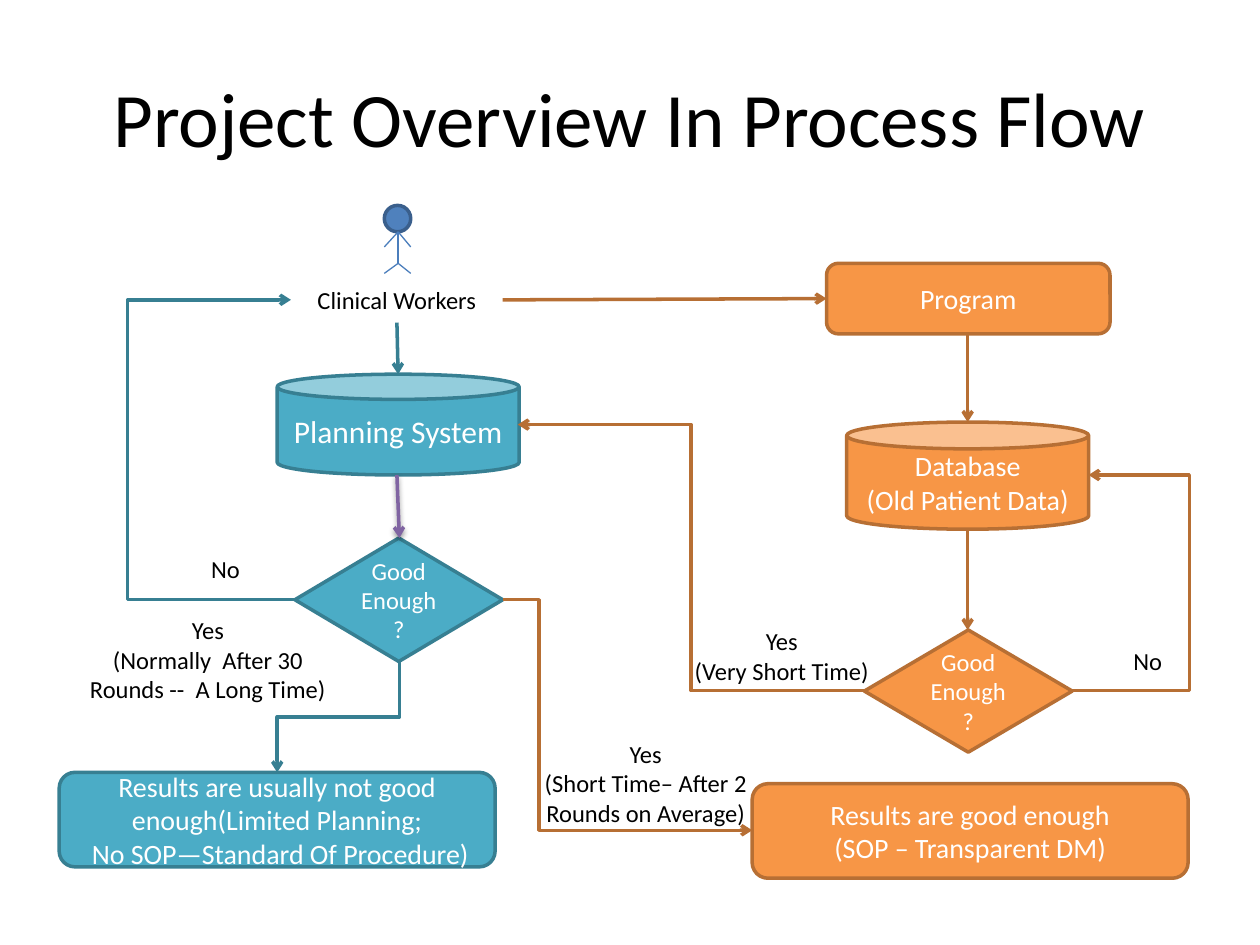
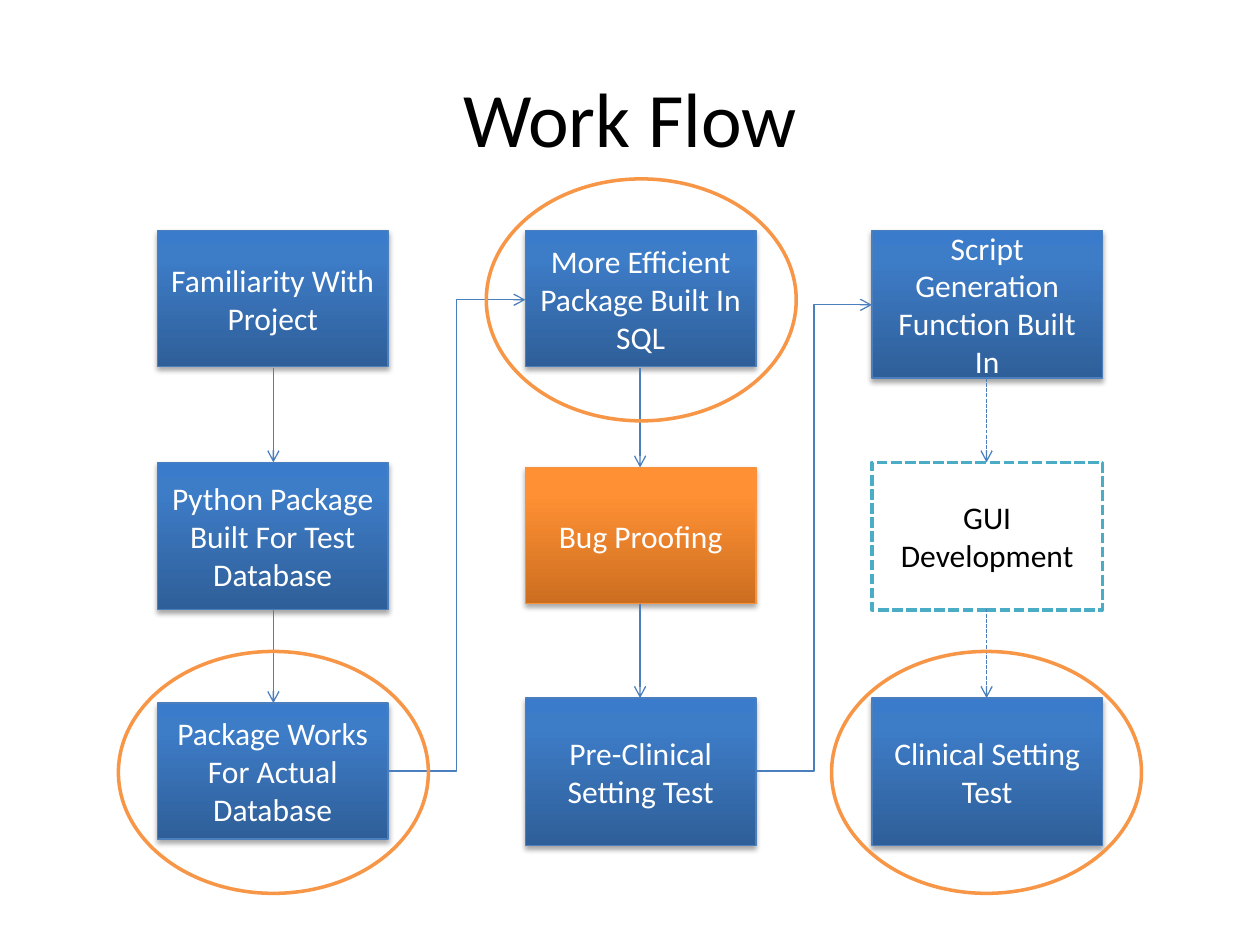
from copy import deepcopy

from lxml import etree
from pptx import Presentation
from pptx import util as u
from pptx.dml.color import RGBColor
from pptx.enum import dml, shapes, text
from pptx.oxml.ns import qn

FONT = "Calibri"
COLORS = {
    "black": "000000", "white": "FFFFFF",
    "blue": "4F81BD", "blue edge": "3A5F8C", "blue line": "4B7EBC",
    "teal": "4BACC6", "teal line": "377F92",
    "orange": "F79646", "orange line": "B76F34", "orange edge": "F69240",
    "purple": "8064A2",
}
# Gradients run from the bottom of a box to its top
GRADIENTS = {
    "blue": ("2F5F99", "3D7CC7", "3A7CCB"),
    "orange": ("CC6E20", "FF9034", "FF9136"),
}
STOPS = (0, 0.8, 1)
KINDS = shapes.MSO_SHAPE
DASH = dml.MSO_LINE.SQUARE_DOT


class Deck:
    def __init__(self):
        self.presentation = Presentation()
        self.presentation.slide_width = u.Inches(10)
        self.presentation.slide_height = u.Inches(7.5)
        self.slide = None

    def color(self, name):
        return RGBColor.from_string(COLORS[name])

    def add_slide(self, title):
        layout = self.presentation.slide_layouts[5]
        self.slide = self.presentation.slides.add_slide(layout)
        shape = self.slide.shapes.title
        shape.left, shape.top, shape.width, shape.height = map(u.Inches, (0.5, 0.3, 9, 1.25))
        self.set_text(shape, title, 44, "black")

    def set_text(self, shape, words, size, color):
        frame = shape.text_frame
        frame.text = words
        frame.word_wrap = True
        frame.vertical_anchor = text.MSO_ANCHOR.MIDDLE
        for paragraph in frame.paragraphs:
            paragraph.alignment = text.PP_ALIGN.CENTER
            paragraph.font.name = FONT
            paragraph.font.size = u.Pt(size)
            paragraph.font.color.rgb = self.color(color)

    def stroke(self, line, color, width, dash=None):
        line.color.rgb = self.color(color)
        line.width = u.Pt(width)
        if dash:
            line.dash_style = dash

    def cast_shadow(self, effects, alpha, distance):
        shadow = etree.SubElement(effects, qn("a:outerShdw"), blurRad=str(u.Pt(3.1)),
                                  dist=str(u.Pt(distance)), dir="5400000", rotWithShape="0")
        tint = etree.SubElement(shadow, qn("a:srgbClr"), val=COLORS["black"])
        etree.SubElement(tint, qn("a:alpha"), val=str(alpha * 1000))

    def label(self, box, words):
        shape = self.slide.shapes.add_textbox(*map(u.Inches, box))
        self.set_text(shape, words, 14, "black")

    def shape(self, kind, box, fill, line, width=2, words="", size=16, color="white", dash=None):
        shape = self.slide.shapes.add_shape(kind, *map(u.Inches, box))
        if fill:
            shape.fill.solid()
            shape.fill.fore_color.rgb = self.color(fill)
        else:
            shape.fill.background()
        self.stroke(shape.line, line, width, dash)
        shape.shadow.inherit = False
        if words:
            self.set_text(shape, words, size, color)
        return shape

    def gradient_box(self, box, words, tone="blue", line="blue line"):
        shape = self.shape(KINDS.RECTANGLE, box, None, line, 0.75, words, 18)
        shape.fill.gradient()
        shape.fill.gradient_angle = 90
        properties = shape._element.spPr
        stop_list = properties.find(".//" + qn("a:gsLst"))
        stop_list.append(deepcopy(stop_list[-1]))
        for stop, position, value in zip(shape.fill.gradient_stops, STOPS, GRADIENTS[tone]):
            stop.position = position
            stop.color.rgb = RGBColor.from_string(value)
        self.cast_shadow(properties.find(qn("a:effectLst")), 35, 1.8)

    def connector(self, kind, start, end, color, width, arrow, dash=None):
        connector = self.slide.shapes.add_connector(kind, *map(u.Inches, (*start, *end)))
        self.stroke(connector.line, color, width, dash)
        properties = connector._element.spPr
        if arrow:
            etree.SubElement(properties.find(qn("a:ln")), qn("a:tailEnd"), type="arrow")
        etree.SubElement(properties, qn("a:effectLst"))
        return connector

    def line(self, start, end, color, width=2, arrow=True, dash=None):
        return self.connector(shapes.MSO_CONNECTOR.STRAIGHT, start, end, color, width, arrow, dash)

    def elbow(self, start, end, color, width=2, bend_x=None):
        """Leave and arrive horizontally, turning at bend_x or halfway."""
        connector = self.connector(shapes.MSO_CONNECTOR.ELBOW, start, end, color, width, True)
        if bend_x is not None:
            share = (bend_x - start[0]) / (end[0] - start[0])
            guides = connector._element.spPr.find(qn("a:prstGeom")).get_or_add_avLst()
            etree.SubElement(guides, qn("a:gd"), name="adj1", fmla=f"val {round(share * 100000)}")

    def drop_elbow(self, start, end, color):
        """Go down, left and down: a level elbow turned by 90 degrees."""
        center_x, center_y = (start[0] + end[0]) / 2, (start[1] + end[1]) / 2
        half_run, half_drop = (start[0] - end[0]) / 2, (end[1] - start[1]) / 2
        connector = self.connector(
            shapes.MSO_CONNECTOR.ELBOW, (center_x - half_drop, center_y - half_run),
            (center_x + half_drop, center_y + half_run), color, 2, True)
        connector._element.spPr.find(qn("a:xfrm")).set("rot", "5400000")


def process_flow(deck):
    deck.add_slide("Project Overview In Process Flow")

    # Clinical worker figure
    deck.shape(KINDS.OVAL, (3.05, 1.63, 0.21, 0.21), "blue", "blue edge")
    neck, hip = (3.16, 1.84), (3.16, 2.09)
    deck.line(neck, hip, "blue line", 0.75, arrow=False)
    for joint, limb_y in ((hip, 2.17), (neck, 1.96)):
        for limb_x in (3.05, 3.26):
            deck.line(joint, (limb_x, limb_y), "blue line", 0.75, arrow=False)
    deck.label((2.31, 2.19, 1.68, 0.38), "Clinical Workers")

    # Nodes
    nodes = (
        (KINDS.FLOWCHART_DECISION, (2.34, 4.27, 1.65, 0.98), "teal", "Good\nEnough?", 14),
        (KINDS.CAN, (2.2, 2.97, 1.92, 0.8), "teal", "Planning System", 18),
        (KINDS.ROUNDED_RECTANGLE, (0.47, 6.13, 3.46, 0.75), "teal",
         "Results are usually not good enough(Limited Planning;\n No SOP—Standard Of Procedure)", 16),
        (KINDS.CAN, (6.72, 3.35, 1.92, 0.85), "orange", "Database\n(Old Patient Data)", 16),
        (KINDS.ROUNDED_RECTANGLE, (6.56, 2.09, 2.25, 0.56), "orange", "Program", 16),
        (KINDS.FLOWCHART_DECISION, (6.86, 5, 1.65, 0.97), "orange", "Good\nEnough?", 14),
        (KINDS.ROUNDED_RECTANGLE, (5.97, 6.22, 3.46, 0.75), "orange",
         "Results are good enough\n(SOP – Transparent DM)", 16),
    )
    for kind, box, fill, words, size in nodes:
        deck.shape(kind, box, fill, fill + " line", 2, words, size)

    # Straight arrows
    deck.line((3.15, 2.56), (3.16, 2.97), "teal line")
    to_decision = deck.line((3.15, 3.77), (3.17, 4.27), "purple")
    deck.cast_shadow(to_decision._element.spPr.find(qn("a:effectLst")), 38, 1.6)
    deck.line((3.99, 2.38), (6.56, 2.37), "orange line")
    deck.line((7.68, 2.65), (7.68, 3.35), "orange line")
    deck.line((7.68, 4.2), (7.68, 5), "orange line")

    # Decision branches
    deck.elbow((2.34, 4.76), (2.31, 2.38), "teal line", bend_x=1.01)
    deck.drop_elbow((3.17, 5.25), (2.2, 6.13), "teal line")
    deck.elbow((8.51, 5.48), (8.64, 3.77), "orange line", bend_x=9.44)
    deck.elbow((6.86, 5.48), (4.11, 3.37), "orange line")
    deck.elbow((3.99, 4.76), (5.97, 6.59), "orange line", bend_x=4.28)

    # Branch labels
    deck.label((0.95, 4.32, 1.68, 0.38), "No")
    deck.label((0.51, 4.86, 2.28, 0.75), "Yes\n(Normally  After 30 Rounds --  A Long Time)")
    deck.label((8.48, 5.07, 1.26, 0.34), "No")
    deck.label((5.22, 5, 1.97, 0.41), "Yes\n(Very Short Time)")
    deck.label((4.14, 6.01, 1.97, 0.41), "Yes\n(Short Time– After 2 Rounds on Average)")


def work_flow(deck):
    deck.add_slide("Work Flow")
    columns, width = (1.25, 4.17, 6.92), 1.83
    low, tall = 1.08, 1.17

    # Steps: column, top, height, words
    steps = (
        (0, 1.83, low, "Familiarity With Project"),
        (0, 3.67, tall, "Python Package Built For Test Database"),
        (0, 5.58, low, "Package Works For Actual Database"),
        (1, 1.83, low, "More Efficient Package Built In SQL"),
        (1, 5.54, tall, "Pre-Clinical Setting Test"),
        (2, 1.83, tall, "Script Generation Function Built In"),
        (2, 5.54, tall, "Clinical Setting Test"),
    )
    for column, top, height, words in steps:
        deck.gradient_box((columns[column], top, width, height), words)
    deck.gradient_box((columns[1], 3.71, width, low), "Bug Proofing", "orange", "orange edge")
    deck.shape(KINDS.RECTANGLE, (columns[2], 3.67, width, tall), "white", "teal", 2,
               "GUI Development", 18, "black", DASH)

    # Arrows down each column: x, then start and end heights
    arrows = (
        (2.17, ((2.92, 3.67), (4.83, 5.58)), None),
        (5.08, ((2.92, 3.71), (4.79, 5.54)), None),
        (7.83, ((3, 3.67), (4.83, 5.54)), DASH),
    )
    for x, spans, dash in arrows:
        for start_y, end_y in spans:
            deck.line((x, start_y), (x, end_y), "blue line", 0.75, dash=dash)

    # Links to the next column
    deck.elbow((3.08, 6.12), (4.17, 2.38), "blue line", 0.75)
    deck.elbow((6, 6.12), (6.92, 2.42), "blue line", 0.75)

    # Rings around the milestones
    for left, top in ((3.86, 1.42), (0.94, 5.17), (6.6, 5.17)):
        deck.shape(KINDS.OVAL, (left, top, 2.46, 1.92), None, "orange")


def main():
    deck = Deck()
    process_flow(deck)
    work_flow(deck)
    deck.presentation.save("out.pptx")


if __name__ == "__main__":
    main()
